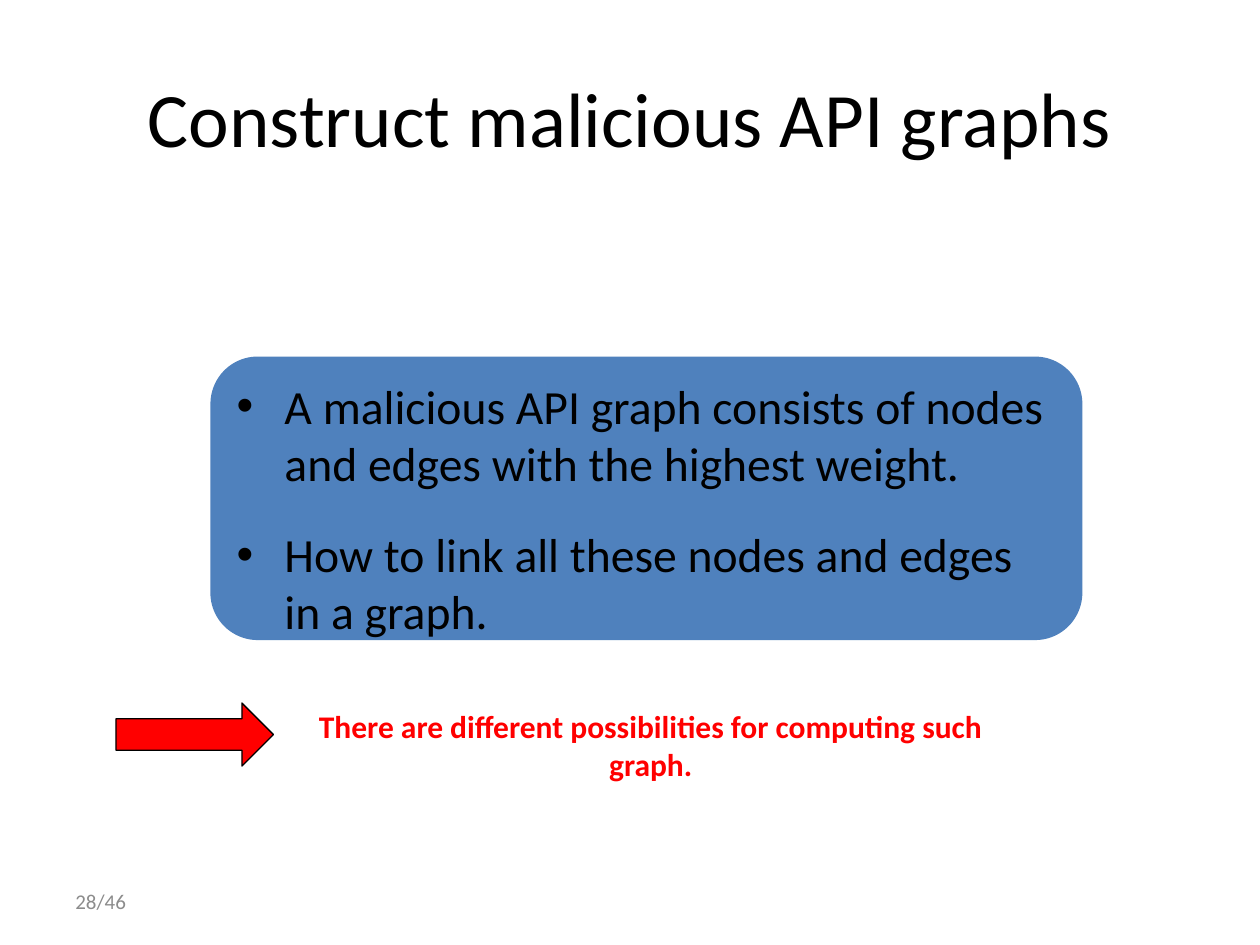
from lxml import etree
from pptx import Presentation
from pptx.dml.color import RGBColor
from pptx.enum.shapes import MSO_SHAPE as SHAPE
from pptx.enum.text import MSO_ANCHOR as ANCHOR, PP_ALIGN as ALIGN
from pptx.oxml.ns import qn
from pptx.util import Inches, Pt

BLACK = RGBColor(0x00, 0x00, 0x00)
BLUE = RGBColor(0x4F, 0x81, 0xBD)
RED = RGBColor(0xFF, 0x00, 0x00)
GRAY = RGBColor(0x8C, 0x8C, 0x8C)

prs = Presentation()
prs.slide_width, prs.slide_height = Inches(10), Inches(7.5)
s = prs.slides.add_slide(prs.slide_layouts[6])


def style(p, text, size, color, align=ALIGN.LEFT, bold=False):
    p.text = text
    p.alignment = align
    p.font.name = "Calibri"
    p.font.size = Pt(size)
    p.font.bold = bold
    p.font.color.rgb = color


def add_shape(kind, x, y, w, h, fill):
    sp = s.shapes.add_shape(kind, Inches(x), Inches(y), Inches(w), Inches(h))
    sp.shadow.inherit = False
    sp.fill.solid()
    sp.fill.fore_color.rgb = fill
    return sp


panel = add_shape(SHAPE.ROUNDED_RECTANGLE, 1.67, 2.83, 6.92, 2.25, BLUE)
panel.line.fill.background()
tf = panel.text_frame
tf.word_wrap = True
tf.vertical_anchor = ANCHOR.TOP
points = [
    "A malicious API graph consists of nodes and edges with the highest weight.",
    "How to link all these nodes and edges in a graph.",
]
for i, point in enumerate(points):
    p = tf.add_paragraph() if i else tf.paragraphs[0]
    style(p, point, 27.2, BLACK)
    p.space_before = Pt(19.5 if i else 0)
    pPr = p._p.get_or_add_pPr()
    pPr.set("marL", str(Inches(0.38)))
    pPr.set("indent", str(-Inches(0.38)))
    font = etree.Element(qn("a:buFont"), typeface="Arial")
    bullet = etree.Element(qn("a:buChar"), char="•")
    pPr.find(qn("a:defRPr")).addprevious(font)
    font.addnext(bullet)

arrow = add_shape(SHAPE.RIGHT_ARROW, 0.92, 5.58, 1.25, 0.5, RED)
arrow.line.color.rgb = BLACK
arrow.line.width = Pt(0.75)

texts = [
    (0.5, 0.3, 9, 1.25, "Construct malicious API graphs", 44, BLACK, ALIGN.CENTER, False),
    (2.25, 5.5, 5.83, 0.83, "There are different possibilities for computing such graph.",
     18, RED, ALIGN.CENTER, True),
    (0.5, 6.95, 2.33, 0.4, "28/46", 12, GRAY, ALIGN.LEFT, False),
]
for x, y, w, h, text, size, color, align, bold in texts:
    tf = s.shapes.add_textbox(Inches(x), Inches(y), Inches(w), Inches(h)).text_frame
    tf.word_wrap = True
    tf.vertical_anchor = ANCHOR.MIDDLE
    style(tf.paragraphs[0], text, size, color, align, bold)

prs.save("out.pptx")
